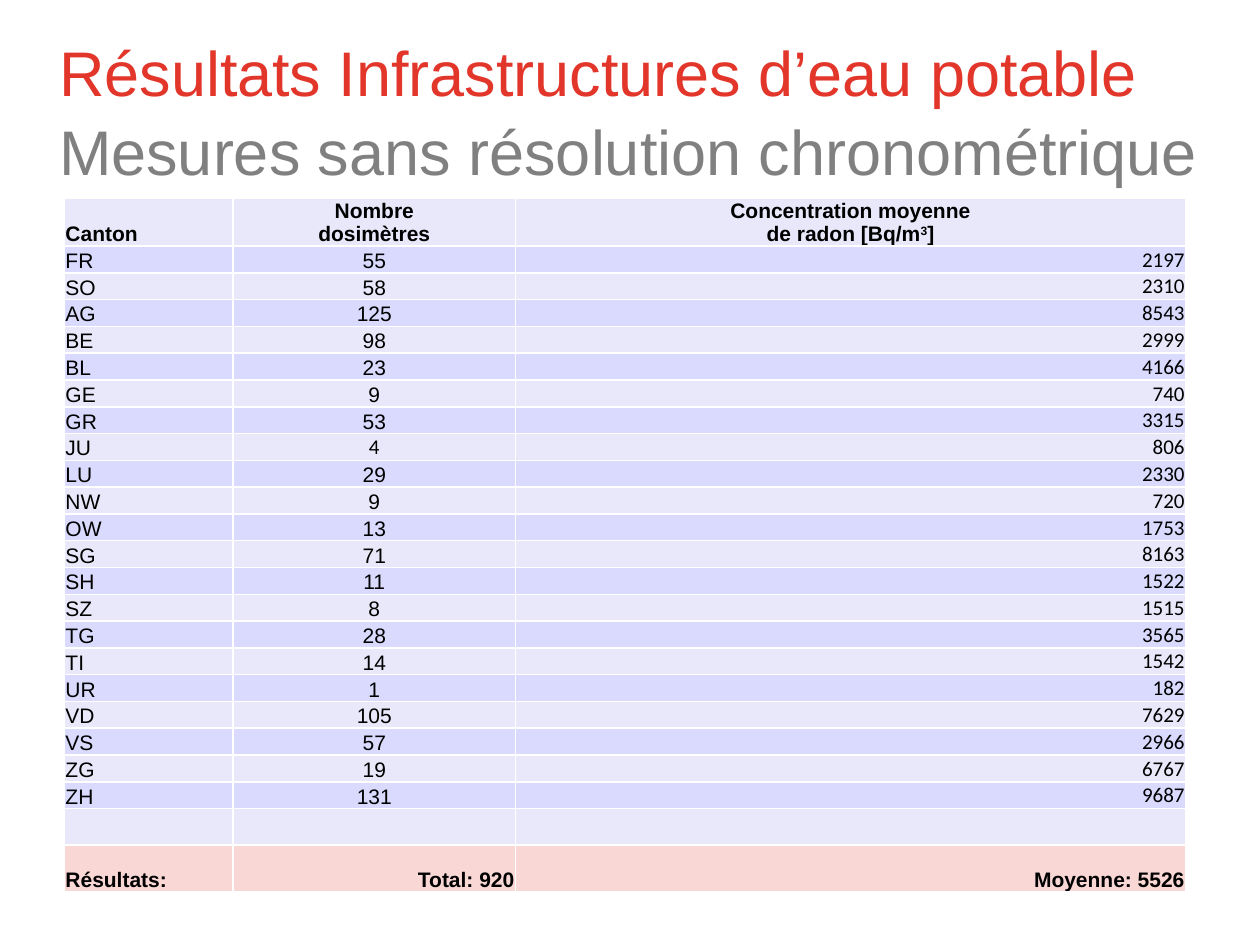
from lxml import etree
from pptx import Presentation
from pptx.dml.color import RGBColor
from pptx.enum.text import MSO_ANCHOR, MSO_AUTO_SIZE, PP_ALIGN
from pptx.oxml.ns import qn
from pptx.util import Cm, Pt

LEFT, CENTER, RIGHT = PP_ALIGN.LEFT, PP_ALIGN.CENTER, PP_ALIGN.RIGHT
MIDDLE, BOTTOM = MSO_ANCHOR.MIDDLE, MSO_ANCHOR.BOTTOM
NO_AUTOFIT = MSO_AUTO_SIZE.NONE

RED = RGBColor(0xE3, 0x36, 0x2B)
GRAY = RGBColor(0x80, 0x80, 0x80)
BLACK = RGBColor(0, 0, 0)
WHITE = RGBColor(0xFF, 0xFF, 0xFF)
LAVENDER = RGBColor(0xE8, 0xE8, 0xFA)
BLUE = RGBColor(0xD9, 0xDA, 0xFE)
PINK = RGBColor(0xF9, 0xD7, 0xD5)

TEXT_FONT, NUMBER_FONT = "Arial", "Calibri"
COLUMN_WIDTHS = (Cm(3.4), Cm(5.69), Cm(13.51))
COLUMN_ALIGNS = (LEFT, CENTER, RIGHT)
HEADER_HEIGHT, ROW_HEIGHT, RESULT_HEIGHT = Cm(0.97), Cm(0.54), Cm(0.94)

HEADERS = ("Canton", "Nombre\vdosimètres", "Concentration moyenne\vde radon [Bq/m")
RESULTS = ("Résultats:", "Total: 920", "Moyenne: 5526")
MEASURES = [
    ("FR", 55, 2197), ("SO", 58, 2310), ("AG", 125, 8543), ("BE", 98, 2999),
    ("BL", 23, 4166), ("GE", 9, 740), ("GR", 53, 3315), ("JU", 4, 806),
    ("LU", 29, 2330), ("NW", 9, 720), ("OW", 13, 1753), ("SG", 71, 8163),
    ("SH", 11, 1522), ("SZ", 8, 1515), ("TG", 28, 3565), ("TI", 14, 1542),
    ("UR", 1, 182), ("VD", 105, 7629), ("VS", 57, 2966), ("ZG", 19, 6767),
    ("ZH", 131, 9687),
]


def add_text(p, text, size=12, color=BLACK, font=TEXT_FONT, bold=False, baseline=None):
    """Append text to a paragraph; a vertical tab becomes a line break."""
    for i, line in enumerate(text.split("\v")):
        if i:
            p.add_line_break()
        r = p.add_run()
        r.text = line
        r.font.size, r.font.name, r.font.bold = Pt(size), font, bold
        r.font.color.rgb = color
        if baseline:
            r.font._element.set("baseline", str(baseline * 1000))


def add_borders(cell):
    """Draw white lines on all sides; they must precede the fill in tcPr."""
    tcPr = cell._tc.get_or_add_tcPr()
    for i, side in enumerate(("a:lnL", "a:lnR", "a:lnT", "a:lnB")):
        ln = etree.Element(qn(side), w=str(Pt(1)))
        fill = etree.SubElement(ln, qn("a:solidFill"))
        etree.SubElement(fill, qn("a:srgbClr"), val=str(WHITE))
        tcPr.insert(i, ln)


def fill_cell(cell, text, fill, align=LEFT, **text_format):
    cell.fill.solid()
    cell.fill.fore_color.rgb = fill
    add_borders(cell)
    cell.margin_left = cell.margin_right = cell.margin_top = Cm(0.02)
    cell.margin_bottom = 0
    cell.vertical_anchor = BOTTOM
    p = cell.text_frame.paragraphs[0]
    p.alignment = align
    add_text(p, text, **text_format)


def add_title(s):
    title = s.shapes.title
    title.left, title.top, title.width, title.height = Cm(1.09), Cm(0.41), Cm(23.4), Cm(3.53)
    tf = title.text_frame
    tf.word_wrap, tf.auto_size, tf.vertical_anchor = True, NO_AUTOFIT, MIDDLE
    tf.margin_left, tf.margin_top, tf.margin_right, tf.margin_bottom = Cm(0.1), Cm(0.2), 0, Cm(0.15)
    p = tf.paragraphs[0]
    p.alignment, p.line_spacing = LEFT, 1.05
    add_text(p, "Résultats Infrastructures d’eau potable", size=36, color=RED)
    p.add_line_break()
    add_text(p, "Mesures sans résolution chronométrique", size=36, color=GRAY)


def add_measures_table(s):
    heights = [HEADER_HEIGHT] + [ROW_HEIGHT] * (len(MEASURES) + 1) + [RESULT_HEIGHT]
    table = s.shapes.add_table(len(heights), len(COLUMN_WIDTHS), Cm(1.3), Cm(3.99),
                               sum(COLUMN_WIDTHS), sum(heights)).table
    for row, height in zip(table.rows, heights):
        row.height = height
    for column, width in zip(table.columns, COLUMN_WIDTHS):
        column.width = width

    last = len(heights) - 1
    for col, align in enumerate(COLUMN_ALIGNS):
        header_align = CENTER if col else LEFT
        fill_cell(table.cell(0, col), HEADERS[col], LAVENDER, header_align, bold=True)
        for row, values in enumerate(MEASURES + [("", "", "")], 1):
            is_calibri = col == 2 or (col == 1 and values[0] == "JU")
            fill_cell(table.cell(row, col), str(values[col]), BLUE if row % 2 else LAVENDER,
                      align, font=NUMBER_FONT if is_calibri else TEXT_FONT)
        result_align = RIGHT if col else LEFT
        fill_cell(table.cell(last, col), RESULTS[col], PINK, result_align, bold=True)

    p = table.cell(0, 2).text_frame.paragraphs[0]
    add_text(p, "3", bold=True, baseline=30)
    add_text(p, "]", bold=True)


def main():
    prs = Presentation()
    prs.slide_width, prs.slide_height = Cm(25.4), Cm(19.05)
    s = prs.slides.add_slide(prs.slide_layouts[5])
    add_title(s)
    add_measures_table(s)
    prs.save("out.pptx")


if __name__ == "__main__":
    main()
